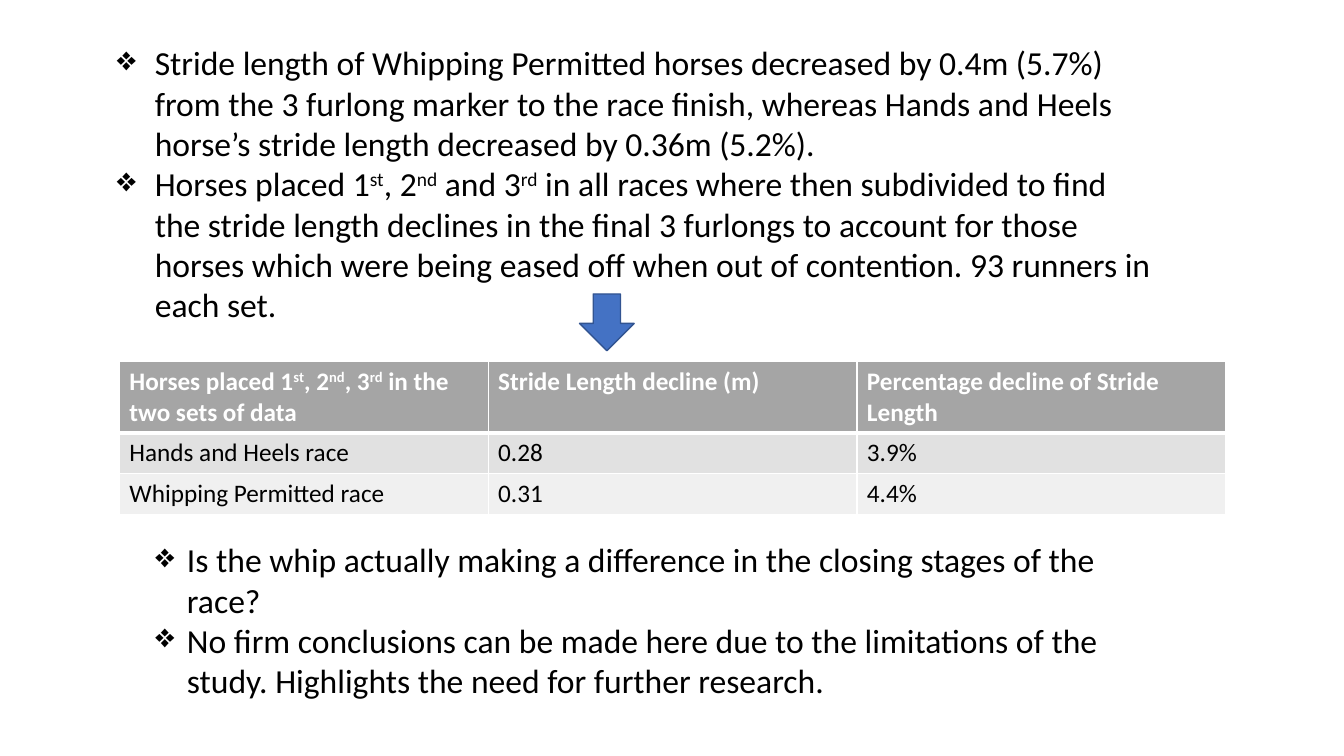
from lxml.etree import SubElement
from pptx import Presentation
from pptx.dml.color import RGBColor
from pptx.enum.shapes import MSO_SHAPE
from pptx.oxml.ns import qn
from pptx.util import Pt

BULLET = "❖"
# Text between carets is raised, as in 1^st^
FINDINGS = [
    "Stride length of Whipping Permitted horses decreased by 0.4m (5.7%) from the 3 furlong "
    "marker to the race finish, whereas Hands and Heels horse’s stride length decreased by "
    "0.36m (5.2%).",
    "Horses placed 1^st^, 2^nd^ and 3^rd^ in all races where then subdivided to find the stride "
    "length declines in the final 3 furlongs to account for those horses which were being eased "
    "off when out of contention. 93 runners in each set.",
]
CONCLUSIONS = [
    "Is the whip actually making a difference in the closing stages of the race?",
    "No firm conclusions can be made here due to the limitations of the study. Highlights the "
    "need for further research.",
]
DECLINES = [
    ["Horses placed 1^st^, 2^nd^, 3^rd^ in the two sets of data",
     "Stride Length decline (m)", "Percentage decline of Stride Length"],
    ["Hands and Heels race", "0.28", "3.9%"],
    ["Whipping Permitted race", "0.31", "4.4%"],
]


def color(hex_string):
    return RGBColor.from_string(hex_string)


class SlideBuilder:
    font_name = "Calibri"
    text_color = "000000"
    header_color = "FFFFFF"
    border_color = "FFFFFF"
    row_fills = ["A5A5A5", "E1E1E1", "F0F0F0"]
    arrow_fill = "4472C4"
    arrow_line = "325491"

    def __init__(self, slide):
        self.slide = slide

    def add_text(self, paragraph, text, size, hex_string, bold=False):
        for index, part in enumerate(text.split("^")):
            run = paragraph.add_run()
            run.text = part
            run.font.name = self.font_name
            run.font.size = Pt(size)
            run.font.bold = bold
            run.font.color.rgb = color(hex_string)
            if index % 2:
                run._r.get_or_add_rPr().set("baseline", "30000")

    def bullet_list(self, left, top, width, height, items, indent):
        box = self.slide.shapes.add_textbox(Pt(left), Pt(top), Pt(width), Pt(height))
        text_frame = box.text_frame
        text_frame.word_wrap = True
        for index, item in enumerate(items):
            paragraph = text_frame.add_paragraph() if index else text_frame.paragraphs[0]
            self.add_text(paragraph, item, 24, self.text_color)
            properties = paragraph._p.get_or_add_pPr()
            properties.set("marL", str(Pt(indent)))
            properties.set("indent", str(-Pt(indent)))
            SubElement(properties, qn("a:buChar"), char=BULLET)

    def border(self, cell, widths):
        # Border lines must come before the fill in the cell properties
        properties = cell._tc.get_or_add_tcPr()
        for position, (side, width) in enumerate(widths.items()):
            line = SubElement(properties, qn(f"a:ln{side}"), w=str(Pt(width)))
            fill = SubElement(line, qn("a:solidFill"))
            SubElement(fill, qn("a:srgbClr"), val=self.border_color)
            properties.insert(position, line)

    def table(self, left, top, column_width, row_heights, rows):
        column_count = len(rows[0])
        frame = self.slide.shapes.add_table(
            len(rows), column_count, Pt(left), Pt(top),
            Pt(column_width * column_count), Pt(sum(row_heights)))
        table = frame.table
        for column in table.columns:
            column.width = Pt(column_width)
        for row_index, values in enumerate(rows):
            table.rows[row_index].height = Pt(row_heights[row_index])
            is_header = row_index == 0
            text_color = self.header_color if is_header else self.text_color
            widths = {"L": 1, "R": 1, "T": 3 if row_index == 1 else 1, "B": 3 if is_header else 1}
            for column_index, value in enumerate(values):
                cell = table.cell(row_index, column_index)
                self.add_text(cell.text_frame.paragraphs[0], value, 18, text_color, is_header)
                cell.fill.solid()
                cell.fill.fore_color.rgb = color(self.row_fills[row_index])
                self.border(cell, widths)

    def down_arrow(self, left, top, width, height):
        arrow = self.slide.shapes.add_shape(
            MSO_SHAPE.DOWN_ARROW, Pt(left), Pt(top), Pt(width), Pt(height))
        arrow.shadow.inherit = False
        arrow.fill.solid()
        arrow.fill.fore_color.rgb = color(self.arrow_fill)
        arrow.line.color.rgb = color(self.arrow_line)
        arrow.line.width = Pt(1)


def main():
    presentation = Presentation()
    presentation.slide_width = Pt(960)
    presentation.slide_height = Pt(540)
    blank_layout = presentation.slide_layouts[6]
    builder = SlideBuilder(presentation.slides.add_slide(blank_layout))

    # Table of stride length declines
    builder.table(85.3, 258, 263.4, [50.6, 29.2, 29.2], DECLINES)

    # Findings, with an arrow leading to the table
    builder.bullet_list(76.5, 26.6, 753, 211, FINDINGS, 27)
    builder.down_arrow(414, 210, 39, 40.5)

    # Conclusions
    builder.bullet_list(104, 381.6, 698.4, 124, CONCLUSIONS, 22.5)

    presentation.save("out.pptx")


if __name__ == "__main__":
    main()
